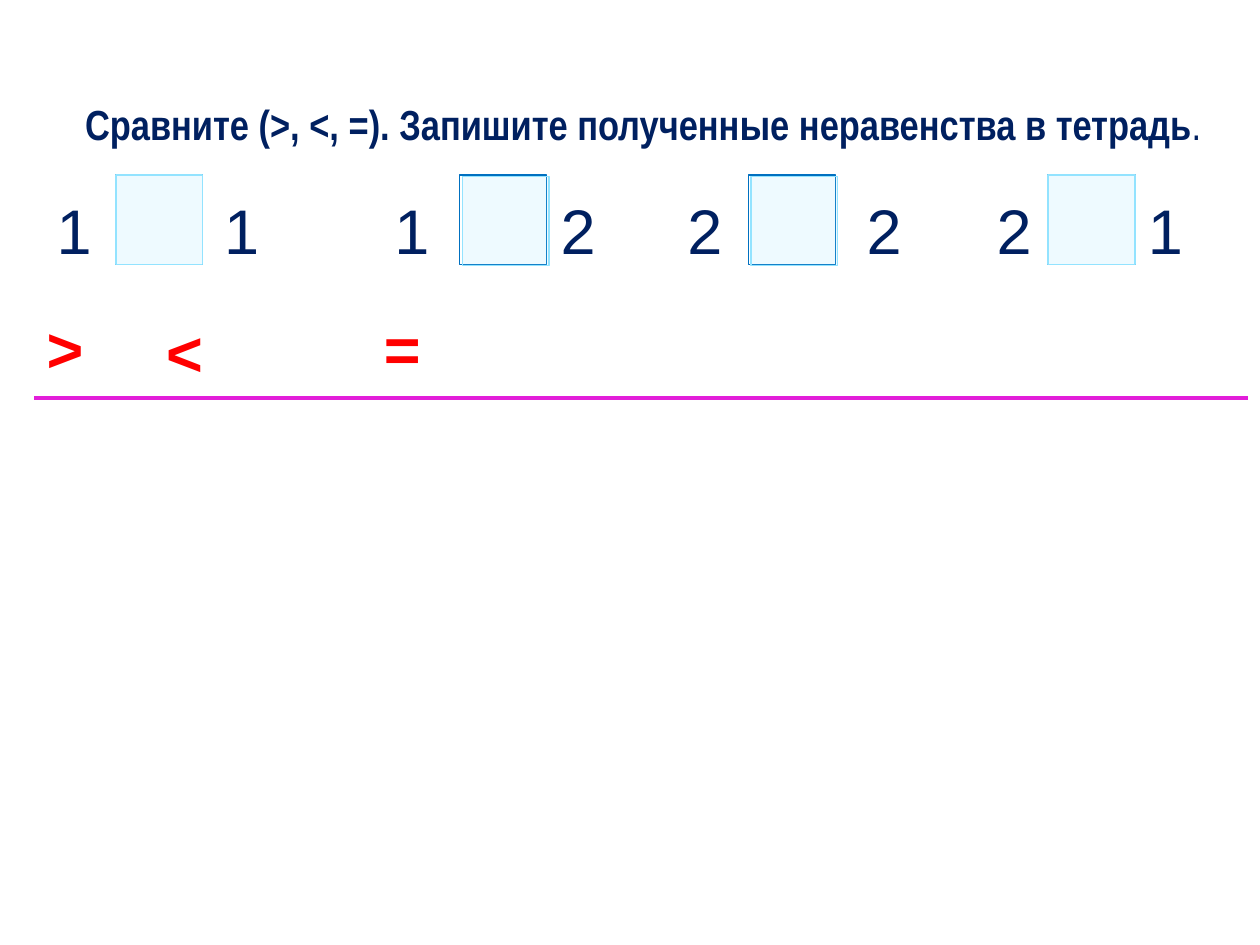
from dataclasses import dataclass

from lxml import etree
from pptx import Presentation
from pptx.dml.color import RGBColor
from pptx.enum.shapes import MSO_CONNECTOR, MSO_SHAPE
from pptx.enum.text import MSO_ANCHOR, MSO_AUTO_SIZE, PP_ALIGN
from pptx.oxml.ns import qn
from pptx.util import Cm, Pt

RECTANGLE = MSO_SHAPE.RECTANGLE
STRAIGHT = MSO_CONNECTOR.STRAIGHT
TOP = MSO_ANCHOR.TOP
GROW = MSO_AUTO_SIZE.SHAPE_TO_FIT_TEXT
LEFT = PP_ALIGN.LEFT
JUSTIFY = PP_ALIGN.JUSTIFY
TITLE_ONLY = 5


@dataclass(frozen=True)
class Theme:
    """Colours, fonts and type sizes of the slide."""
    navy: RGBColor = RGBColor(0x00, 0x20, 0x60)
    red: RGBColor = RGBColor(0xFF, 0x00, 0x00)
    blue: RGBColor = RGBColor(0x00, 0x70, 0xC0)
    sky: RGBColor = RGBColor(0x93, 0xE3, 0xFF)
    magenta: RGBColor = RGBColor(0xE2, 0x1E, 0xD9)
    title_font: str = "Arial Narrow"
    symbol_font: str = "Arial"
    title_size: int = 24
    symbol_size: int = 36
    tile_opacity: int = 15


THEME = Theme()
ROW_TOP = 3.53
NUMBER_TOP = 3.73
NUMBER_WIDTH = 1.22
CELL_WIDTH, CELL_HEIGHT = 1.75, 1.8
COMPARISONS = [
    ("1", 0.89, 2.34, "1", 4.27, 0, 0),
    ("1", 7.7, 9.27, "2", 11.05, 0.05, 0.03),
    ("2", 13.61, 15.09, "2", 17.22, 0.05, 0.03),
    ("2", 19.84, 21.13, "1", 22.89, 0, 0),
]
SIGNS = [(">", 0.69, 6.12), ("<", 3.1, 6.2), ("=", 7.49, 6.12)]


def write_text(paragraph, text, *, font, size, color, bold=False):
    """Append a formatted run to a paragraph."""
    run = paragraph.add_run()
    run.text = text
    run.font.name = font
    run.font.size = Pt(size)
    run.font.bold = bold
    run.font.color.rgb = color


def add_title(slide):
    """Fill the title placeholder with the indented task."""
    title = slide.shapes.title
    title.left, title.top = Cm(0.3), Cm(1.85)
    title.width, title.height = Cm(24.71), Cm(1.27)
    frame = title.text_frame
    frame.vertical_anchor = TOP
    frame.auto_size = GROW
    task = frame.paragraphs[0]
    task.alignment = JUSTIFY
    task._p.get_or_add_pPr().set("indent", str(Cm(1.16)))
    style = {"font": THEME.title_font, "size": THEME.title_size, "color": THEME.navy}
    write_text(task, "Сравните (>, <, =). Запишите полученные неравенства в тетрадь",
               bold=True, **style)
    write_text(task, ".", **style)


def add_symbol(slide, symbol, left, top, width, *, color, bold=False, wrap=False):
    """Place one large number or sign."""
    box = slide.shapes.add_textbox(Cm(left), Cm(top), Cm(width), Cm(CELL_HEIGHT))
    frame = box.text_frame
    frame.word_wrap = wrap
    frame.auto_size = GROW
    frame.paragraphs[0].alignment = LEFT
    write_text(frame.paragraphs[0], symbol, font=THEME.symbol_font,
               size=THEME.symbol_size, color=color, bold=bold)


def add_cell(slide, left, top, *, outline, fill=None):
    """Draw an answer cell, hollow or with a translucent fill."""
    cell = slide.shapes.add_shape(RECTANGLE, Cm(left), Cm(top),
                                  Cm(CELL_WIDTH), Cm(CELL_HEIGHT))
    cell.shadow.inherit = False
    cell.line.color.rgb = outline
    cell.line.width = Pt(0.75)
    if fill is None:
        cell.fill.background()
        return
    cell.fill.solid()
    cell.fill.fore_color.rgb = fill
    tint = cell._element.spPr.find(qn("a:solidFill"))[0]
    etree.SubElement(tint, qn("a:alpha")).set("val", str(THEME.tile_opacity * 1000))


def add_divider(slide):
    """Draw the line under the exercise."""
    divider = slide.shapes.add_connector(STRAIGHT, Cm(0.69), Cm(8.03), Cm(25.15), Cm(8.03))
    divider.line.color.rgb = THEME.magenta
    divider.line.width = Pt(2.25)
    etree.SubElement(divider._element.spPr, qn("a:effectLst"))


def main():
    """Build and save the comparison exercise."""
    deck = Presentation()
    deck.slide_width, deck.slide_height = Cm(25.4), Cm(19.05)
    slide = deck.slides.add_slide(deck.slide_layouts[TITLE_ONLY])
    add_title(slide)
    add_divider(slide)
    for first, first_left, cell_left, second, second_left, shift_x, shift_y in COMPARISONS:
        add_symbol(slide, first, first_left, NUMBER_TOP, NUMBER_WIDTH, color=THEME.navy)
        add_symbol(slide, second, second_left, NUMBER_TOP, NUMBER_WIDTH, color=THEME.navy)
        add_cell(slide, cell_left, ROW_TOP, outline=THEME.blue)
        add_cell(slide, cell_left + shift_x, ROW_TOP + shift_y,
                 outline=THEME.sky, fill=THEME.sky)
    for sign, left, top in SIGNS:
        add_symbol(slide, sign, left, top, CELL_WIDTH, color=THEME.red, bold=True, wrap=True)
    deck.save("out.pptx")


if __name__ == "__main__":
    main()
